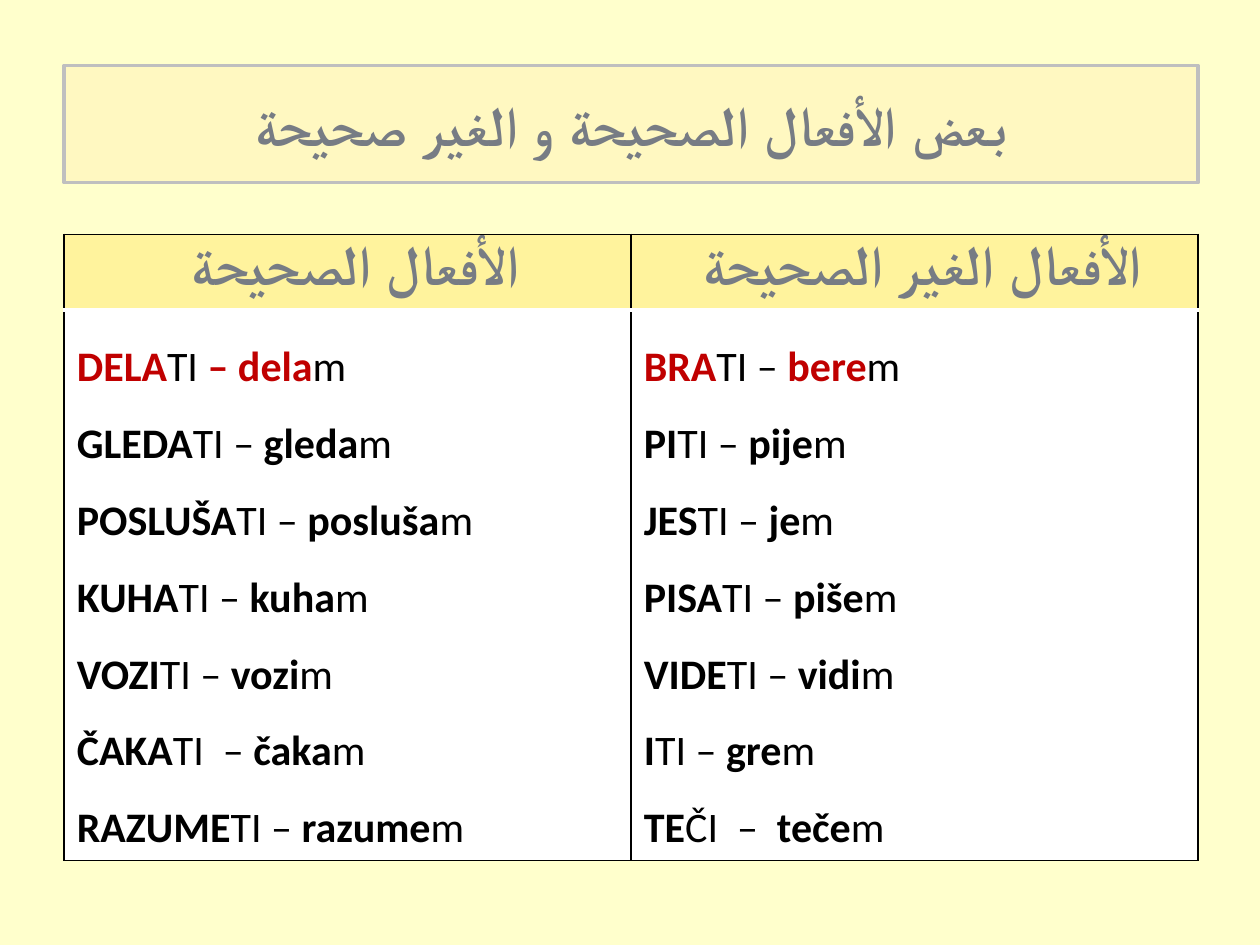
from pptx import Presentation
from pptx.dml.color import RGBColor
from pptx.enum.text import MSO_ANCHOR as Anchor, PP_ALIGN as Align
from pptx.oxml import parse_xml
from pptx.oxml.ns import nsdecls
from pptx.util import Inches, Pt

COLORS = {"page": "FFFFCC", "box": "FFF8C1", "edge": "BFBFBF", "head": "FFF39D",
          "gray": "777C84", "red": "C00000", "black": "000000", "white": "FFFFFF"}
TITLE = "بعض الأفعال الصحيحة و الغير صحيحة"
VERBS = {
    "الأفعال الصحيحة ": [
        "DELA|TI| – dela|m", "GLEDA|TI – |gleda|m ", "POSLUŠA|TI – |posluša|m",
        "KUHA|TI – |kuha|m", "VOZI|TI – |vozi|m", "ČAKA|TI  –| čaka|m",
        "RAZUME|TI –| razume|m"],
    "الأفعال الغير الصحيحة ": [
        "BRA|TI – |bere|m", "PI|TI –| pije|m", "JES|TI –| je|m",
        "PISA|TI –| piše|m", "VIDE|TI –| vidi|m", "I|TI –| gre|m ",
        "TE|ČI  –|  teče|m"],
}


def color(name):
    """Return the named colour."""
    return RGBColor.from_string(COLORS[name])


def paint(fill, name):
    """Make a fill solid."""
    fill.solid()
    fill.fore_color.rgb = color(name)


def style(para, size, align, rtl=True):
    """Set the font and direction of a paragraph."""
    para.alignment = align
    para.font.name = "Calibri"
    para.font.size = Pt(size)
    if rtl:
        para._p.get_or_add_pPr().set("rtl", "1")


def heading(para, text, rtl=True):
    """Write a bold grey centred heading."""
    para.text = text
    style(para, 32, Align.CENTER, rtl)
    para.font.bold = True
    para.font.color.rgb = color("gray")


def border(cell, top, bottom):
    """Draw the four sides of a cell, each rule a colour and a width."""
    side = ("black", 0.96)
    props = cell._tc.get_or_add_tcPr()
    rules = zip("LRTB", (side, side, top, bottom))
    for place, (edge, (name, width)) in enumerate(rules):
        props.insert(place, parse_xml(
            f'<a:ln{edge} {nsdecls("a")} w="{int(Pt(width))}"><a:solidFill>'
            f'<a:srgbClr val="{COLORS[name]}"/></a:solidFill></a:ln{edge}>'))


def add_verb(para, verb, tint):
    """Write a verb whose parts alternate between bold and plain."""
    for index, part in enumerate(verb.split("|")):
        run = para.add_run()
        run.text = part
        run.font.bold = index % 2 == 0
        run.font.color.rgb = color(tint if run.font.bold else "black")


def add_title(slide, left, top, width, height):
    """Place the framed title."""
    title = slide.shapes.title
    title.left, title.top, title.width, title.height = left, top, width, height
    paint(title.fill, "box")
    title.line.color.rgb = color("edge")
    title.line.width = Pt(2)
    title.text_frame.vertical_anchor = Anchor.MIDDLE
    heading(title.text_frame.paragraphs[0], TITLE, rtl=False)


def fill_verbs(frame, verbs):
    """Write the model verb in red, then the others line by line."""
    first, rest = frame.paragraphs[0], frame.add_paragraph()
    for para in (first, rest):
        style(para, 24, Align.LEFT)
        para.line_spacing = 1.5
    add_verb(first, verbs[0], "red")
    for index, verb in enumerate(verbs[1:]):
        if index:
            rest.add_line_break()
        add_verb(rest, verb, "black")


def add_verbs(slide, left, top, width, height):
    """Place the table with one column for each group of verbs."""
    table = slide.shapes.add_table(2, len(VERBS), left, top, width, height).table
    table.rows[0].height = Inches(0.6)
    table.rows[1].height = height - Inches(0.6)
    thin, thick = ("black", 0.96), ("white", 3)
    for col, (name, verbs) in enumerate(VERBS.items()):
        head, body = table.cell(0, col), table.cell(1, col)
        paint(head.fill, "head")
        paint(body.fill, "white")
        border(head, thin, thick)
        border(body, thick, thin)
        heading(head.text_frame.paragraphs[0], name)
        fill_verbs(body.text_frame, verbs)


def main():
    """Build and save the slide."""
    deck = Presentation()
    deck.slide_width, deck.slide_height = Inches(10), Inches(7.5)
    slide = deck.slides.add_slide(deck.slide_layouts[5])
    paint(slide.background.fill, "page")
    left, width = Inches(0.51), Inches(9)
    add_title(slide, left, Inches(0.52), width, Inches(0.93))
    add_verbs(slide, left, Inches(1.86), width, Inches(4.36))
    deck.save("out.pptx")


if __name__ == "__main__":
    main()
